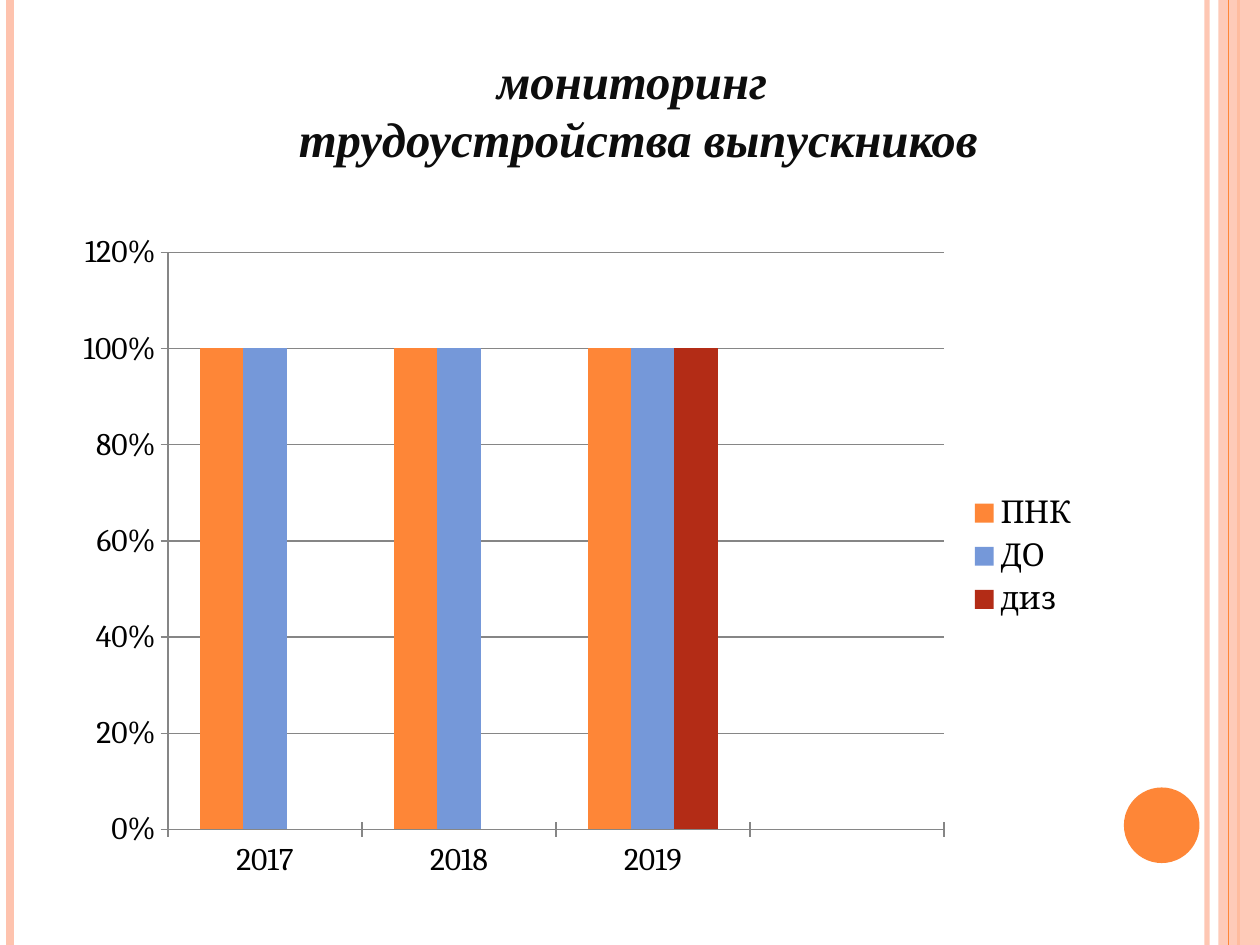
import lxml.etree
import pptx
import pptx.chart.data
import pptx.dml.color
import pptx.enum.chart
import pptx.enum.shapes
import pptx.enum.text
import pptx.oxml.ns
import pptx.util
from pptx.util import Inches

ORANGE = "FE8637"
PEACH = "FEC3AE"
GREY = "868686"


def color(hex_string):
    return pptx.dml.color.RGBColor.from_string(hex_string)


def set_opacity(element, percent):
    """Make the solid colour inside an element partly transparent."""
    fill_color = next(element.iter(pptx.oxml.ns.qn("a:srgbClr")))
    alpha = lxml.etree.SubElement(fill_color, pptx.oxml.ns.qn("a:alpha"))
    alpha.set("val", str(percent * 1000))


def add_plain_shape(slide, kind, left, top, width, height, fill):
    shape = slide.shapes.add_shape(kind, left, top, width, height)
    shape.shadow.inherit = False
    shape.fill.solid()
    shape.fill.fore_color.rgb = color(fill)
    shape.line.fill.background()
    return shape


def add_stripe(slide, x, height, line_color, width):
    stripe = slide.shapes.add_connector(
        pptx.enum.shapes.MSO_CONNECTOR.STRAIGHT, x, 0, x, height)
    stripe.line.color.rgb = color(line_color)
    stripe.line.width = pptx.util.Pt(width)
    lxml.etree.SubElement(stripe._element.spPr,
                          pptx.oxml.ns.qn("a:effectLst"))
    return stripe


def add_frame(slide, width, height):
    """Edge stripes, right-hand band and the round marker."""
    inner_stripe = add_stripe(slide, width - Inches(0.42), height, PEACH, 3)
    set_opacity(inner_stripe._element, 93)
    add_stripe(slide, Inches(0.08), height, PEACH, 4.5)
    add_stripe(slide, width - Inches(0.17), height, ORANGE, 1.5)

    band_width = Inches(0.33)
    band = add_plain_shape(slide, pptx.enum.shapes.MSO_SHAPE.RECTANGLE,
                           width - band_width, 0, band_width, height, PEACH)
    set_opacity(band._element, 87)
    add_stripe(slide, width - Inches(0.25), height, ORANGE, 0.75)

    diameter = Inches(0.6)
    add_plain_shape(slide, pptx.enum.shapes.MSO_SHAPE.OVAL,
                    width - Inches(1.08), height - Inches(1.25),
                    diameter, diameter, ORANGE)


def add_title(slide, left, top, width, height):
    text_frame = slide.shapes.add_textbox(left, top, width, height).text_frame
    text_frame.word_wrap = True
    text_frame.vertical_anchor = pptx.enum.text.MSO_ANCHOR.BOTTOM
    paragraph = text_frame.paragraphs[0]
    paragraph.text = "мониторинг \vтрудоустройства выпускников"
    paragraph.alignment = pptx.enum.text.PP_ALIGN.CENTER
    font = paragraph.font
    font.name = "Times New Roman"
    font.size = pptx.util.Pt(27.9)
    font.bold = True
    font.italic = True
    font.color.rgb = color("0D0D0D")


def add_employment_chart(slide, left, top, width, height):
    data = pptx.chart.data.CategoryChartData(number_format="0%")
    data.categories = ["2017", "2018", "2019", ""]
    series_rows = [
        ("ПНК", (1, 1, 1, None), ORANGE),
        ("ДО", (1, 1, 1, None), "7598D9"),
        ("диз", (None, None, 1, None), "B32C16"),
    ]
    for name, values, _ in series_rows:
        data.add_series(name, values)
    chart = slide.shapes.add_chart(
        pptx.enum.chart.XL_CHART_TYPE.COLUMN_CLUSTERED,
        left, top, width, height, data).chart
    chart.has_title = False
    chart.font.name = "Cambria"
    chart.font.size = pptx.util.Pt(18)
    chart.font.color.rgb = color("000000")

    # Columns
    plot = chart.plots[0]
    plot.vary_by_categories = False
    plot.gap_width = 150
    plot.overlap = 0
    for series, (_, _, fill) in zip(plot.series, series_rows):
        series.format.fill.solid()
        series.format.fill.fore_color.rgb = color(fill)

    # Axes and gridlines
    value_axis = chart.value_axis
    value_axis.minimum_scale = 0
    value_axis.maximum_scale = 1.2
    value_axis.major_unit = 0.2
    value_axis.has_major_gridlines = True
    value_axis.tick_labels.number_format = "0%"
    value_axis.tick_labels.number_format_is_linked = False
    for axis in (chart.category_axis, value_axis):
        axis.major_tick_mark = pptx.enum.chart.XL_TICK_MARK.CROSS
    for part in (chart.category_axis, value_axis, value_axis.major_gridlines):
        part.format.line.color.rgb = color(GREY)
        part.format.line.width = pptx.util.Pt(0.75)

    # Legend
    chart.has_legend = True
    chart.legend.position = pptx.enum.chart.XL_LEGEND_POSITION.RIGHT
    chart.legend.include_in_layout = False


def main():
    presentation = pptx.Presentation()
    presentation.slide_width = Inches(10)
    presentation.slide_height = Inches(7.5)
    slide = presentation.slides.add_slide(presentation.slide_layouts[6])
    add_frame(slide, presentation.slide_width, presentation.slide_height)
    add_title(slide, Inches(1.46), Inches(0.23), Inches(7.21), Inches(1.15))
    add_employment_chart(slide, Inches(0.5), Inches(1.75),
                         Inches(8.17), Inches(5.33))
    presentation.save("out.pptx")


if __name__ == "__main__":
    main()
